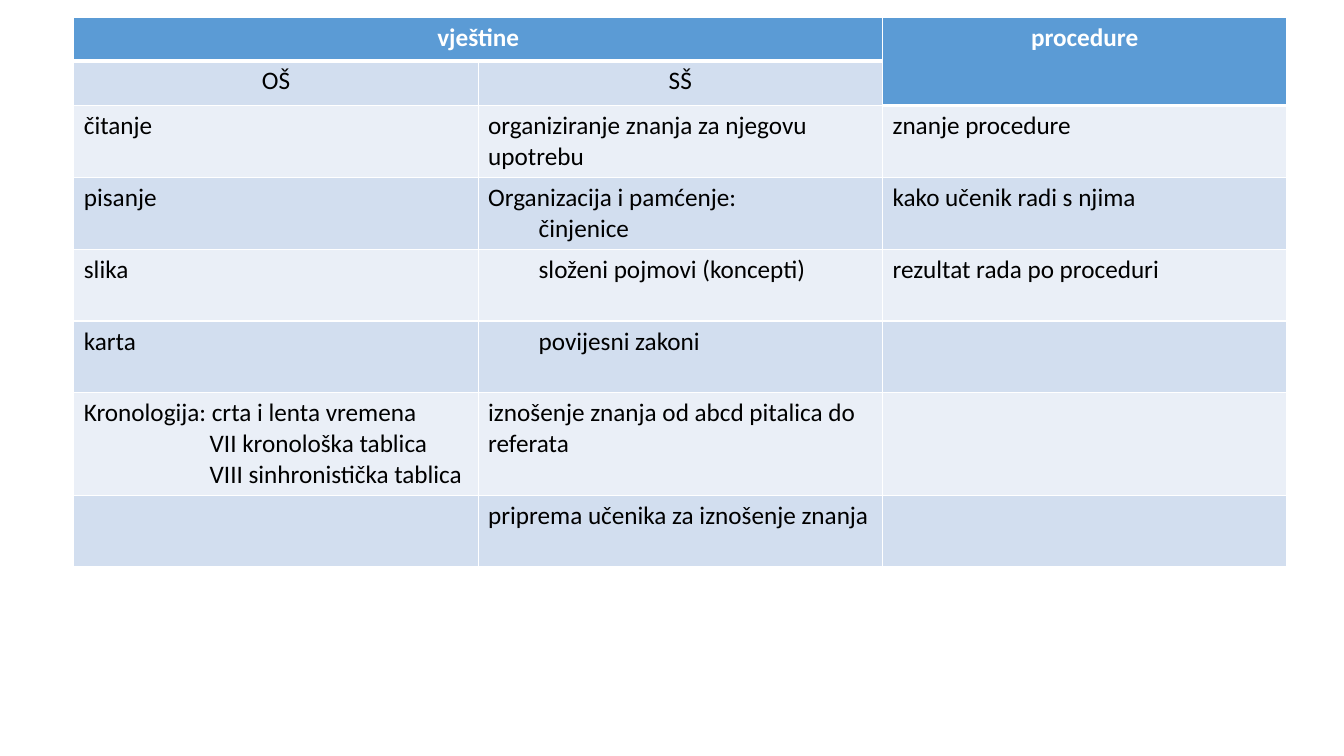
import dataclasses
import typing

import lxml.etree
import pptx
import pptx.dml.color
import pptx.enum.text
import pptx.oxml.ns
import pptx.table
import pptx.util

Cm = pptx.util.Cm
Pt = pptx.util.Pt
ALIGN = pptx.enum.text.PP_ALIGN


@dataclasses.dataclass(frozen=True)
class Theme:
    font: str = "Calibri"
    size: int = 18
    head: str = "5B9BD5"
    dark: str = "D2DEEF"
    light: str = "EAEFF7"
    white: str = "FFFFFF"
    black: str = "000000"
    thin: int = 1
    thick: int = 3


@dataclasses.dataclass(frozen=True)
class Line:
    text: str
    indent: float = 0


@dataclasses.dataclass(frozen=True)
class Row:
    height: float
    cells: tuple[tuple[Line, ...], ...]


THEME = Theme()
NEST = 1.27  # indent of the sub-items
CHART = 3.17  # indent of the chronology tables
TALL = 1.81

# Table content, row by row
ROWS = (
    Row(1.09, ((Line("vještine"),), (), (Line("procedure"),))),
    Row(1.13, ((Line("OŠ"),), (Line("SŠ"),), ())),
    Row(TALL, ((Line("čitanje"),),
               (Line("organiziranje znanja za njegovu upotrebu"),),
               (Line("znanje procedure"),))),
    Row(TALL, ((Line("pisanje"),),
               (Line("Organizacija i pamćenje:"), Line("činjenice", NEST)),
               (Line("kako učenik radi s njima"),))),
    Row(TALL, ((Line("slika"),),
               (Line("složeni pojmovi (koncepti)", NEST),),
               (Line("rezultat rada po proceduri"),))),
    Row(TALL, ((Line("karta"),), (Line("povijesni zakoni", NEST),), ())),
    Row(2.58, ((Line("Kronologija: crta i lenta vremena"),
                Line("VII kronološka tablica", CHART),
                Line("VIII sinhronistička tablica", CHART)),
               (Line("iznošenje znanja od abcd pitalica do referata"),), ())),
    Row(TALL, ((), (Line("priprema učenika za iznošenje znanja"),), ())),
)
HEADS = {(0, 0), (0, 1), (0, 2), (1, 2)}


def paint(fill: typing.Any, color: str) -> None:
    fill.solid()
    fill.fore_color.rgb = pptx.dml.color.RGBColor.from_string(color)


def write(para: typing.Any, text: str, *, color: str, bold: bool = False,
          align: ALIGN = ALIGN.LEFT, indent: float = 0) -> None:
    para.alignment = align
    if indent:
        props = para._p.get_or_add_pPr()
        props.set("marL", str(Cm(indent)))
        props.set("indent", "0")
    run = para.add_run()
    run.text = text
    run.font.name = THEME.font
    run.font.size = Pt(THEME.size)
    run.font.bold = bold
    paint(run.font.fill, color)


def border(cell: pptx.table._Cell, top: int, bottom: int) -> None:
    props = cell._tc.get_or_add_tcPr()
    name = pptx.oxml.ns.qn
    sides = {"L": THEME.thin, "R": THEME.thin, "T": top, "B": bottom}
    for side, width in sides.items():
        edge = lxml.etree.SubElement(props, name(f"a:ln{side}"), w=str(Pt(width)))
        fill = lxml.etree.SubElement(edge, name("a:solidFill"))
        lxml.etree.SubElement(fill, name("a:srgbClr"), val=THEME.white)


def dress(cell: pptx.table._Cell, row: int, col: int) -> None:
    """Set borders, fill and text of one cell."""
    head = (row, col) in HEADS
    under = (row - 1, col) in HEADS and not head
    last = head and (row + 1, col) not in HEADS
    border(cell, THEME.thick if under else THEME.thin,
           THEME.thick if last else THEME.thin)
    band = THEME.dark if row % 2 else THEME.light
    paint(cell.fill, THEME.head if head else band)
    frame = cell.text_frame
    for rank, line in enumerate(ROWS[row].cells[col]):
        para = frame.add_paragraph() if rank else frame.paragraphs[0]
        write(para, line.text, bold=head, indent=line.indent,
              color=THEME.white if head else THEME.black,
              align=ALIGN.CENTER if row < 2 else ALIGN.LEFT)


def main() -> None:
    deck = pptx.Presentation()
    deck.slide_width, deck.slide_height = Cm(33.87), Cm(19.05)
    slide = deck.slides.add_slide(deck.slide_layouts[6])

    # Table frame
    total = sum(row.height for row in ROWS)
    grid = slide.shapes.add_table(len(ROWS), 3, Cm(1.86), Cm(0.44),
                                  Cm(30.57), Cm(total)).table
    grid.first_row = grid.horz_banding = False
    for col in grid.columns:
        col.width = Cm(10.19)

    # Merged headings
    grid.cell(0, 0).merge(grid.cell(0, 1))
    grid.cell(0, 2).merge(grid.cell(1, 2))

    # Cells
    for at, row in enumerate(ROWS):
        grid.rows[at].height = Cm(row.height)
        for col in range(len(row.cells)):
            dress(grid.cell(at, col), at, col)

    deck.save("out.pptx")


if __name__ == "__main__":
    main()
